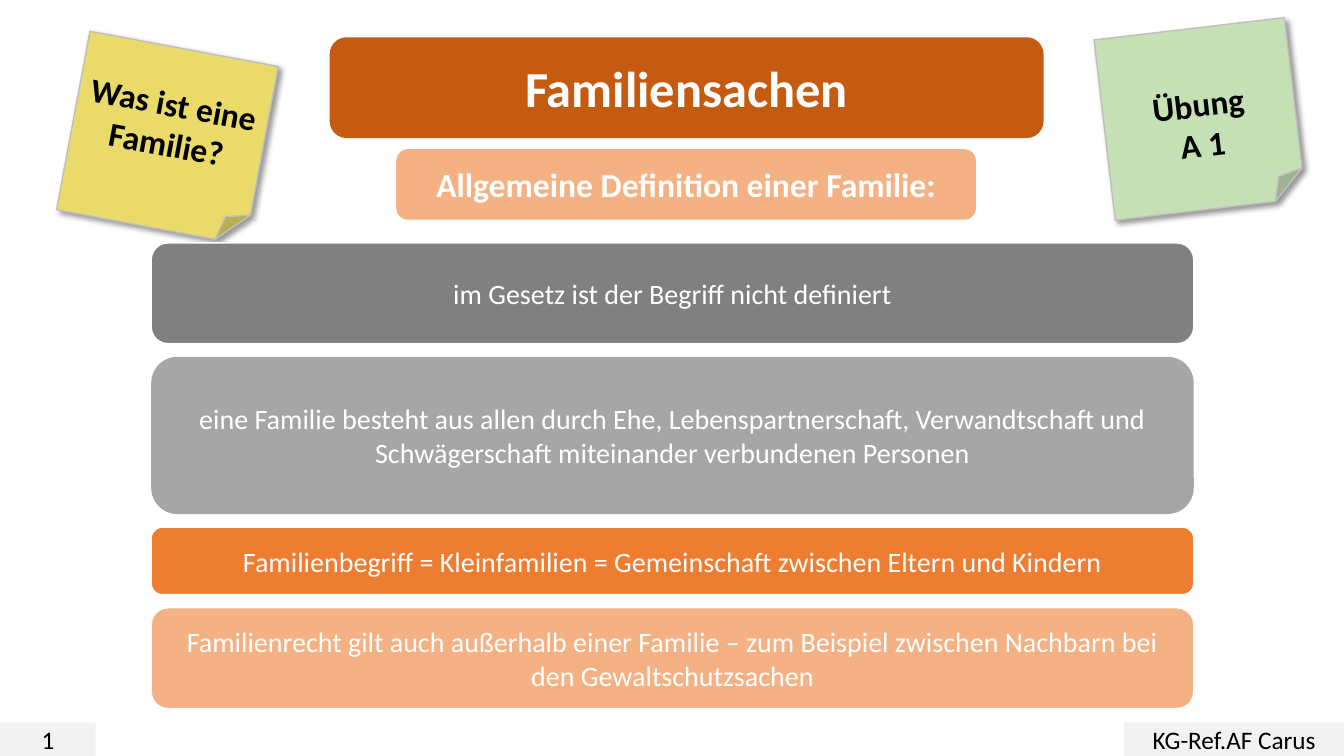
import pptx
import pptx.util
import pptx.dml.color
import pptx.enum.shapes
import pptx.enum.text
import pptx.oxml
import pptx.oxml.ns

Inches = pptx.util.Inches
Pt = pptx.util.Pt
SHAPE = pptx.enum.shapes.MSO_SHAPE

COLORS = {
    "white": "FFFFFF",
    "black": "000000",
    "rust": "C55A11",
    "orange": "ED7D31",
    "peach": "F4B183",
    "dark_gray": "808080",
    "mid_gray": "A6A6A6",
    "light_gray": "F2F2F2",
    "note_edge": "BFBFBF",
    "yellow": "E9DA69",
    "green": "C5E0B4",
}
FONT = "Calibri"


def rgb(name):
    return pptx.dml.color.RGBColor.from_string(COLORS[name])


def add_box(slide, kind, at, fill, lines, size, color="white", bold=False, edge=None):
    """Filled shape with centred text, one paragraph per line."""
    sp = slide.shapes.add_shape(kind, *(Inches(v) for v in at))
    sp.shadow.inherit = False
    sp.fill.solid()
    sp.fill.fore_color.rgb = rgb(fill)
    if edge:
        sp.line.color.rgb = rgb(edge)
        sp.line.width = Pt(1)
    else:
        sp.line.fill.background()

    tf = sp.text_frame
    tf.word_wrap = True
    tf.vertical_anchor = pptx.enum.text.MSO_ANCHOR.MIDDLE
    for i, line in enumerate(lines):
        p = tf.add_paragraph() if i else tf.paragraphs[0]
        p.text = line
        p.alignment = pptx.enum.text.PP_ALIGN.CENTER
        p.font.name = FONT
        p.font.size = Pt(size)
        p.font.bold = bold
        p.font.color.rgb = rgb(color)
    return sp


def add_shadow(sp):
    """Soft shadow towards the lower right."""
    effects = sp.element.spPr.find(pptx.oxml.ns.qn("a:effectLst"))
    effects.append(pptx.oxml.parse_xml(
        f'<a:outerShdw {pptx.oxml.ns.nsdecls("a")} blurRad="{Pt(4)}" dist="{Pt(3)}" '
        'dir="2700000" algn="tl" rotWithShape="0">'
        f'<a:srgbClr val="{COLORS["black"]}"><a:alpha val="40000"/></a:srgbClr>'
        '</a:outerShdw>'))


def add_note(slide, left, top, angle, fill, lines, inset=0.05):
    """Tilted sticky note."""
    sp = add_box(slide, SHAPE.FOLDED_CORNER, (left, top, 1.9, 1.8), fill, lines, 24,
                 color="black", bold=True, edge="note_edge")
    sp.rotation = angle
    sp.text_frame.margin_top = Inches(inset)
    add_shadow(sp)


def add_statements(slide, statements, left=1.5, top=2.41, width=10.34, gap=0.13):
    """Stack of rounded bars with equal gaps."""
    for height, fill, edge, text in statements:
        add_box(slide, SHAPE.ROUNDED_RECTANGLE, (left, top, width, height), fill,
                [text], 20, edge=edge)
        top += height + gap


def main():
    prs = pptx.Presentation()
    prs.slide_width = Inches(13.33)
    prs.slide_height = Inches(7.5)
    slide = prs.slides.add_slide(prs.slide_layouts[6])

    # Title and subtitle
    add_box(slide, SHAPE.ROUNDED_RECTANGLE, (3.27, 0.37, 7.08, 1), "rust",
            ["Familiensachen"], 36, bold=True)
    add_box(slide, SHAPE.ROUNDED_RECTANGLE, (3.93, 1.48, 5.75, 0.7), "peach",
            ["Allgemeine Definition einer Familie:"], 24, bold=True)

    # Sticky notes
    add_note(slide, 0.71, 0.47, 10.6, "yellow", ["Was ist eine Familie?"])
    add_note(slide, 10.95, 0.28, -6.7, "green", ["Übung", "A 1"], inset=0.45)

    # Definitions
    add_statements(slide, [
        (1, "dark_gray", "white", "im Gesetz ist der Begriff nicht definiert"),
        (1.56, "mid_gray", None,
         "eine Familie besteht aus allen durch Ehe, Lebenspartnerschaft, "
         "Verwandtschaft und Schwägerschaft miteinander verbundenen Personen"),
        (0.67, "orange", "white",
         "Familienbegriff = Kleinfamilien = Gemeinschaft zwischen Eltern und Kindern"),
        (1, "peach", "white",
         "Familienrecht gilt auch außerhalb einer Familie – zum Beispiel "
         "zwischen Nachbarn bei den Gewaltschutzsachen"),
    ])

    # Footer
    for left, width, text in [(0, 0.95, "1"), (11.15, 2.18, "KG-Ref.AF Carus")]:
        add_box(slide, SHAPE.RECTANGLE, (left, 7.17, width, 0.33), "light_gray",
                [text], 18, color="black")

    prs.save("out.pptx")


if __name__ == "__main__":
    main()
